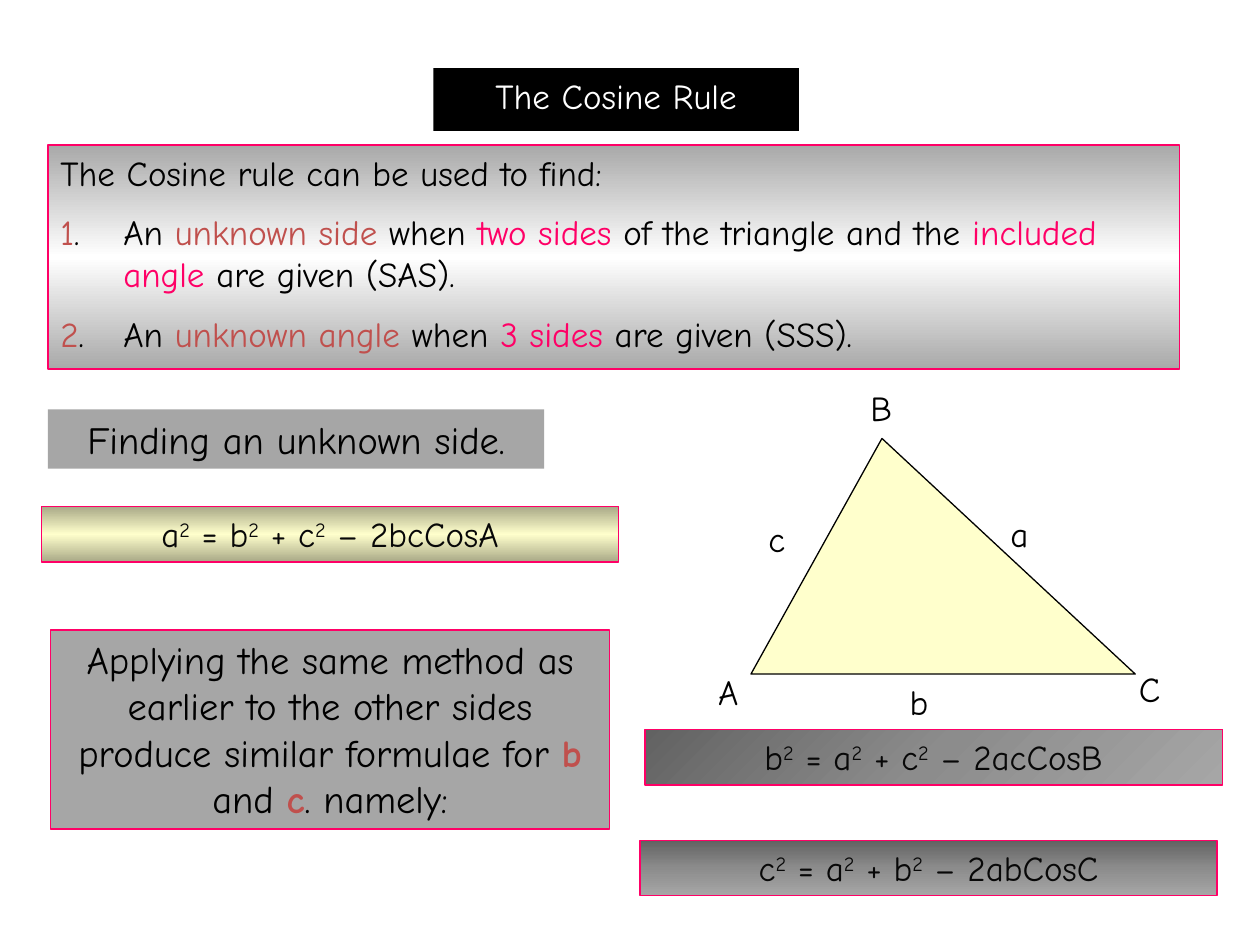
from copy import deepcopy

from pptx import Presentation
from pptx.dml.color import RGBColor
from pptx.enum.shapes import MSO_SHAPE
from pptx.enum.text import MSO_ANCHOR, PP_ALIGN
from pptx.oxml.ns import qn
from pptx.util import Inches, Pt

RECTANGLE = MSO_SHAPE.RECTANGLE
TOP = MSO_ANCHOR.TOP
LEFT, CENTER = PP_ALIGN.LEFT, PP_ALIGN.CENTER
FONT = "Comic Neue"
COLORS = {
    "black": "000000", "ink": "080808", "white": "FFFFFF", "pink": "FF0066",
    "red": "C0504D", "gray": "A6A6A6", "silver": "A9A9A9", "cream": "FFFFCC",
    "olive": "A9A987", "dark": "626262", "middle": "8C8C8C",
}


def rgb(name):
    return RGBColor.from_string(COLORS[name])


def fill_text(box, lines, size=20, align=CENTER):
    frame = box.text_frame
    frame.word_wrap = True
    frame.vertical_anchor = TOP
    for index, parts in enumerate(lines):
        para = frame.add_paragraph() if index else frame.paragraphs[0]
        para.alignment = align
        if index:
            para.space_before = Pt(10)
        for text, color, style in parts:
            span = para.add_run()
            span.text = text
            span.font.name = FONT
            span.font.size = Pt(size)
            span.font.color.rgb = rgb(color)
            if style == "bold":
                span.font.bold = True
            if style == "super":
                span.font._element.set("baseline", "30000")


deck = Presentation()
deck.slide_width = Inches(10)
deck.slide_height = Inches(7.5)
page = deck.slides.add_slide(deck.slide_layouts[6])

formulas = [
    ("a^ = b^ + c^ – 2bcCosA", "ink"),
    ("b^ = a^ + c^ – 2acCosB", "ink"),
    ("c^ = a^ + b^ – 2abCosC", "ink"),
]
formula_lines = []
for formula, color in formulas:
    parts = []
    for piece in formula.split("^"):
        if parts:
            parts.append(("2", color, "super"))
        parts.append((piece, color, ""))
    formula_lines.append([parts])

method = [[
    ("Applying the same method as earlier to the other sides produce similar formulae for ", "black", ""),
    ("b", "red", "bold"), (" and ", "black", ""),
    ("c", "red", "bold"), (". namely:", "black", ""),
]]
uses = [
    [("The Cosine rule can be used to find:", "black", "")],
    [("1", "red", ""), (".\tAn ", "black", ""), ("unknown side", "red", ""),
     (" when ", "black", ""), ("two sides", "pink", ""),
     (" of the triangle and the ", "black", ""), ("included angle", "pink", ""),
     (" are given (SAS).", "black", "")],
    [("2", "red", ""), (".\tAn ", "black", ""), ("unknown angle", "red", ""),
     (" when ", "black", ""), ("3 sides", "pink", ""),
     (" are given (SSS).", "black", "")],
]
title = [[("The Cosine Rule", "white", "")]]
heading = [[("Finding an unknown side.", "black", "")]]

yellow = ["olive", "cream", "olive"]
slate = ["dark", "middle", "gray"]
metal = ["silver", "white", "silver"]
panels = [
    (0.33, 4.02, 4.58, 0.44, yellow, 90, True, formula_lines[0], 20, CENTER),
    (0.4, 5, 4.44, 1.58, ["gray"], 0, True, method, 22, CENTER),
    (5.12, 5.79, 4.58, 0.44, slate, 45, True, formula_lines[1], 20, CENTER),
    (5.08, 6.67, 4.58, 0.44, slate, 90, True, formula_lines[2], 20, CENTER),
    (3.44, 0.54, 2.9, 0.5, ["black"], 0, False, title, 20, CENTER),
    (0.38, 1.15, 8.98, 1.78, metal, 90, True, uses, 20, LEFT),
    (0.38, 3.25, 3.94, 0.47, ["gray"], 0, False, heading, 22, CENTER),
]
for left, top, width, height, fills, angle, outlined, lines, size, align in panels:
    panel = page.shapes.add_shape(
        RECTANGLE, Inches(left), Inches(top), Inches(width), Inches(height))
    panel.shadow.inherit = False
    if len(fills) == 1:
        panel.fill.solid()
        panel.fill.fore_color.rgb = rgb(fills[0])
    else:
        panel.fill.gradient()
        panel.fill.gradient_angle = 360 - angle
        stop_list = panel._element.spPr.find(qn("a:gradFill")).find(qn("a:gsLst"))
        stop_list.append(deepcopy(stop_list[0]))
        for stop, name, position in zip(panel.fill.gradient_stops, fills, (0, 0.5, 1)):
            stop.color.rgb = rgb(name)
            stop.position = position
    if outlined:
        panel.line.color.rgb = rgb("pink")
        panel.line.width = Pt(0.75)
    else:
        panel.line.fill.background()
    fill_text(panel, lines, size, align)
    if align == LEFT:
        for para in panel.text_frame.paragraphs:
            properties = para._p.get_or_add_pPr()
            properties.set("marL", str(Inches(0.5)))
            properties.set("indent", str(-Inches(0.5)))

builder = page.shapes.build_freeform(Inches(5.96), Inches(5.35))
builder.add_line_segments(
    [(Inches(9.01), Inches(5.35)), (Inches(7), Inches(3.48))], close=True)
triangle = builder.convert_to_shape()
triangle.shadow.inherit = False
triangle.fill.solid()
triangle.fill.fore_color.rgb = rgb("cream")
triangle.line.color.rgb = rgb("black")
triangle.line.width = Pt(0.75)

labels = [("A", 5.6, 5.27), ("B", 6.81, 3.02), ("C", 8.94, 5.25),
          ("a", 7.92, 4.02), ("b", 7.12, 5.35), ("c", 6, 4.06)]
for letter, left, top in labels:
    label = page.shapes.add_textbox(Inches(left), Inches(top), Inches(0.52), Inches(0.43))
    fill_text(label, [[(letter, "black", "")]], align=LEFT)

deck.save("out.pptx")
